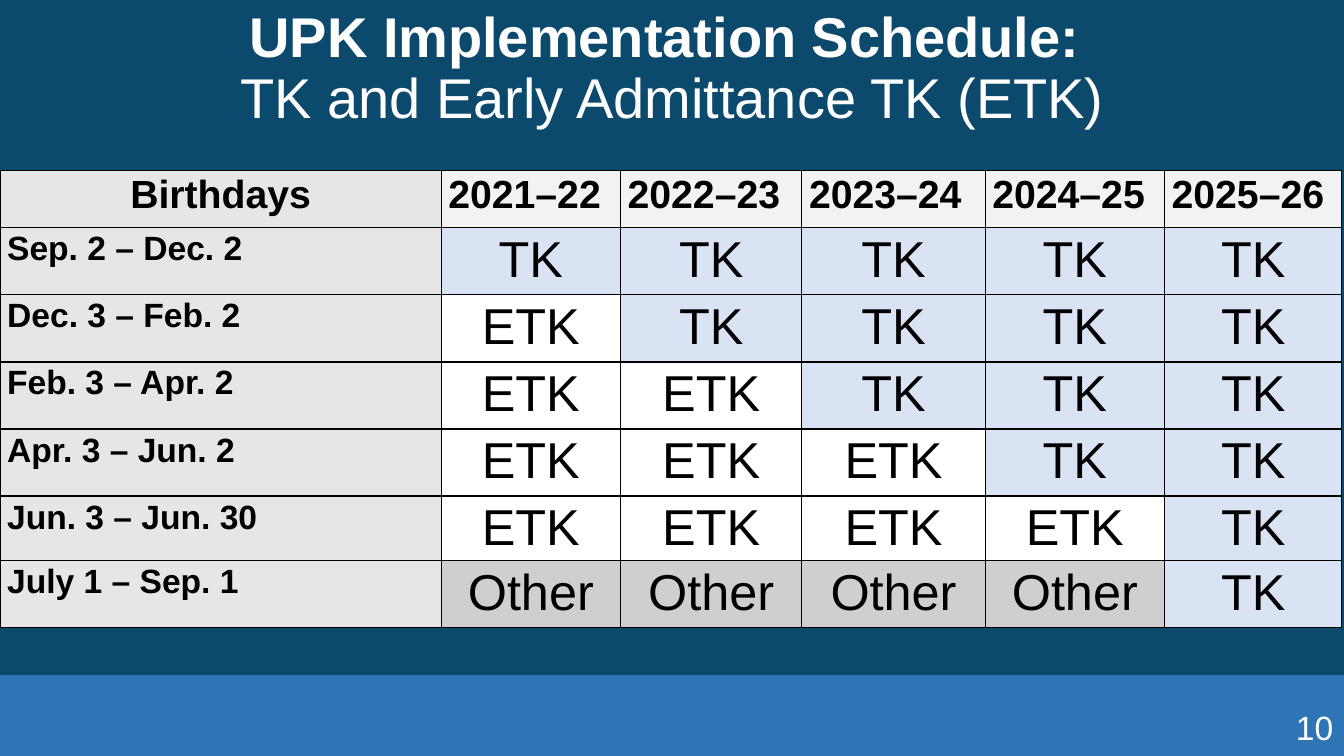
from dataclasses import dataclass

from lxml.etree import SubElement
from pptx import Presentation
from pptx.dml.color import RGBColor
from pptx.enum.shapes import MSO_SHAPE
from pptx.enum.text import MSO_ANCHOR, PP_ALIGN
from pptx.oxml.ns import qn
from pptx.util import Cm, Pt

FONT = "Arial"
NAVY, BLUE, WHITE, BLACK = "0C4A6D", "2E75B6", "FFFFFF", "000000"
LABEL_FILL, YEAR_FILL = "E7E6E6", "F2F2F2"
STATUS_FILLS = {"TK": "DAE3F3", "ETK": WHITE, "Other": "D0CECE"}
YEARS = ["2021–22", "2022–23", "2023–24", "2024–25", "2025–26"]
COLUMN_WIDTHS = [11.12, 4.52, 4.57, 4.62, 4.52, 4.47]


@dataclass
class Cohort:
    birthdays: str
    before: str
    years_before: int
    height: float = 1.69


@dataclass
class CellStyle:
    fill: str
    size: int
    bold: bool
    align: PP_ALIGN


COHORTS = [
    Cohort("Sep. 2 – Dec. 2", "ETK", 0),
    Cohort("Dec. 3 – Feb. 2", "ETK", 1),
    Cohort("Feb. 3 – Apr. 2", "ETK", 2),
    Cohort("Apr. 3 – Jun. 2", "ETK", 3),
    Cohort("Jun. 3 – Jun. 30", "ETK", 4, 1.57),
    Cohort("July 1 – Sep. 1", "Other", 4),
]


def color(value: str) -> RGBColor:
    return RGBColor.from_string(value)


def apply_format(target, values: dict) -> None:
    for name, value in values.items():
        setattr(target, name, value)


def add_span(para, text: str, size: int, ink: str, bold: bool = False) -> None:
    span = para.add_run()
    span.text = text
    apply_format(span.font, {"name": FONT, "size": Pt(size), "bold": bold})
    span.font.color.rgb = color(ink)


def add_text_box(page, left: float, top: float, width: float, height: float, frame_format: dict):
    box = page.shapes.add_textbox(Cm(left), Cm(top), Cm(width), Cm(height))
    apply_format(box.text_frame, {"word_wrap": True, **frame_format})
    return box.text_frame.paragraphs[0]


def add_borders(cell) -> None:
    properties = cell._tc.get_or_add_tcPr()
    for side in ("lnL", "lnR", "lnT", "lnB"):
        line = SubElement(properties, qn(f"a:{side}"), w=str(Pt(1)))
        SubElement(SubElement(line, qn("a:solidFill")), qn("a:srgbClr"), val=BLACK)


def fill_cell(cell, text: str, style: CellStyle) -> None:
    side = Cm(0.18)
    apply_format(cell, {"margin_left": side, "margin_right": side, "margin_top": 0, "margin_bottom": 0})
    add_borders(cell)
    cell.fill.solid()
    cell.fill.fore_color.rgb = color(style.fill)
    para = cell.text_frame.paragraphs[0]
    apply_format(para, {"alignment": style.align, "line_spacing": 1.07})
    add_span(para, text, style.size, BLACK, style.bold)


def add_schedule(page) -> None:
    heights = [1.45] + [cohort.height for cohort in COHORTS]
    frame = page.shapes.add_table(
        len(heights), len(COLUMN_WIDTHS), 0, Cm(4.29), Cm(sum(COLUMN_WIDTHS)), Cm(sum(heights))
    )
    table = frame.table
    apply_format(table, {"first_row": False, "horz_banding": False})
    for column, width in zip(table.columns, COLUMN_WIDTHS):
        column.width = Cm(width)
    for row, height in zip(table.rows, heights):
        row.height = Cm(height)

    fill_cell(table.cell(0, 0), "Birthdays", CellStyle(LABEL_FILL, 28, True, PP_ALIGN.CENTER))
    for column, year in enumerate(YEARS, 1):
        fill_cell(table.cell(0, column), year, CellStyle(YEAR_FILL, 28, True, PP_ALIGN.LEFT))
    for row, cohort in enumerate(COHORTS, 1):
        fill_cell(table.cell(row, 0), cohort.birthdays, CellStyle(LABEL_FILL, 24, True, PP_ALIGN.LEFT))
        for column in range(1, len(YEARS) + 1):
            status = cohort.before if column <= cohort.years_before else "TK"
            style = CellStyle(STATUS_FILLS[status], 36, False, PP_ALIGN.CENTER)
            fill_cell(table.cell(row, column), status, style)


def add_footer_band(page) -> None:
    band = page.shapes.add_shape(MSO_SHAPE.RECTANGLE, 0, Cm(17.01), Cm(33.87), Cm(2.04))
    band.shadow.inherit = False
    band.fill.solid()
    band.fill.fore_color.rgb = color(BLUE)
    band.line.fill.background()


def add_title(page) -> None:
    para = add_text_box(page, 0.43, -0.08, 33.02, 3.68, {"vertical_anchor": MSO_ANCHOR.MIDDLE})
    apply_format(para, {"alignment": PP_ALIGN.CENTER, "line_spacing": 0.9})
    add_span(para, "UPK Implementation Schedule: ", 40, WHITE, True)
    para.add_line_break()
    add_span(para, "TK and Early Admittance TK (ETK)", 40, WHITE)


def add_page_number(page) -> None:
    margins = {f"margin_{side}": 0 for side in ("left", "right", "top", "bottom")}
    para = add_text_box(page, 31.09, 18.06, 2.51, 0.76, {"vertical_anchor": MSO_ANCHOR.BOTTOM, **margins})
    para.alignment = PP_ALIGN.RIGHT
    add_span(para, "10", 24, WHITE)


def main() -> None:
    deck = Presentation()
    apply_format(deck, {"slide_width": Cm(33.87), "slide_height": Cm(19.05)})
    page = deck.slides.add_slide(deck.slide_layouts[6])
    page.background.fill.solid()
    page.background.fill.fore_color.rgb = color(NAVY)
    add_footer_band(page)
    add_title(page)
    add_schedule(page)
    add_page_number(page)
    deck.save("out.pptx")


if __name__ == "__main__":
    main()
